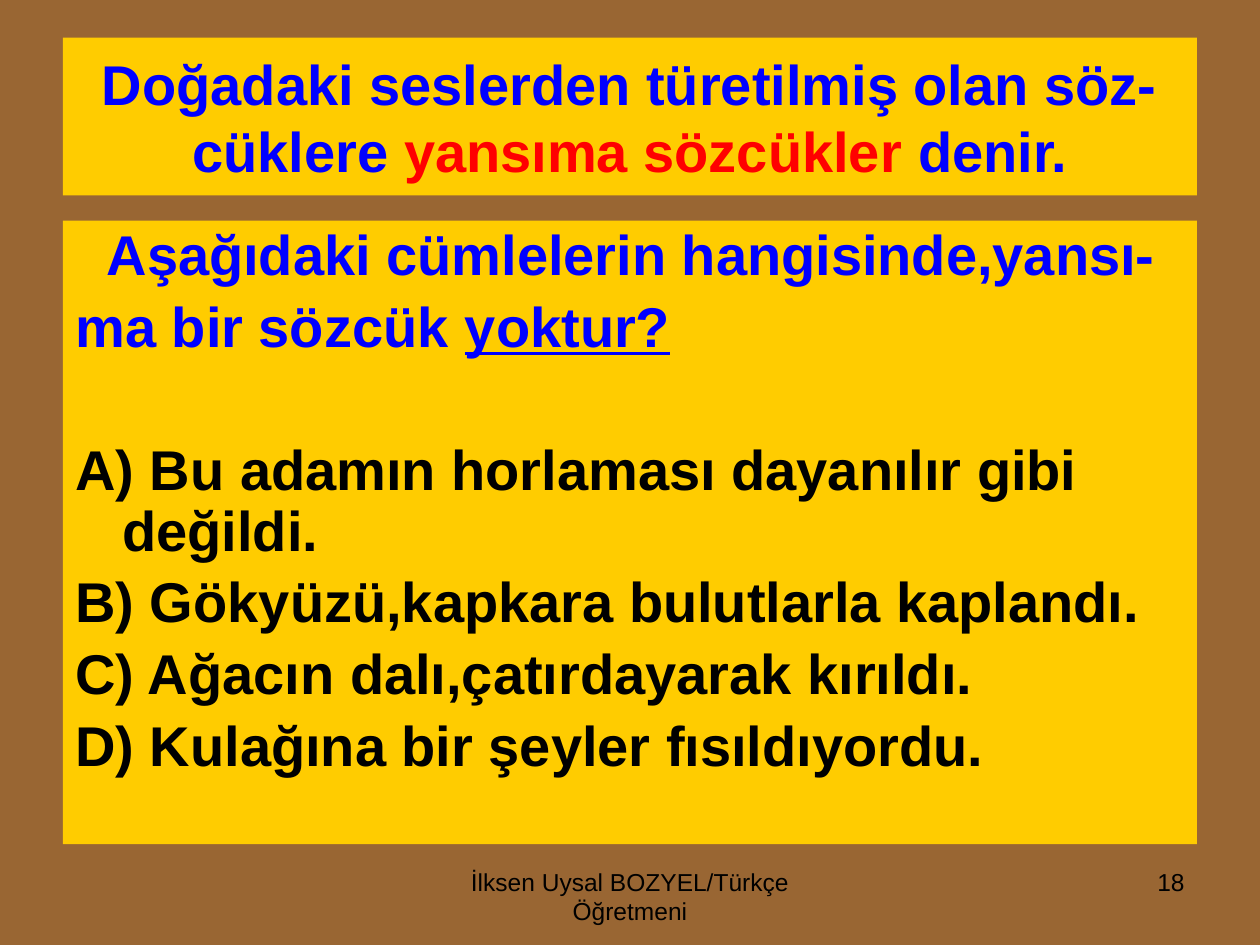
from dataclasses import dataclass

import pptx
import pptx.dml.color
import pptx.enum.shapes
import pptx.enum.text
import pptx.util
from pptx.util import Cm

BROWN, YELLOW = "996633", "FFCC00"
BLUE, RED, BLACK = "0000FF", "FF0000", "000000"
ALIGN = pptx.enum.text.PP_ALIGN
ANCHOR = pptx.enum.text.MSO_ANCHOR

HANGING = 0.95  # cm
QUESTION_INDENT = 0.63  # cm, first line of the question
LINE_GAP = 6.4  # pt, 20 % of the text size
ANSWERS_GAP = 47.5  # pt, one empty line above the answers


@dataclass
class Run:
    text: str
    color: str = BLACK
    size: int = 32
    bold: bool = True
    underline: bool = False


@dataclass
class Line:
    runs: list[Run]
    gap: float = LINE_GAP
    first_indent: float = 0


@dataclass
class Box:
    left: float
    top: float
    width: float
    height: float


def rgb(color: str) -> pptx.dml.color.RGBColor:
    return pptx.dml.color.RGBColor.from_string(color)


def add_runs(paragraph, runs: list[Run]) -> None:
    for item in runs:
        for index, part in enumerate(item.text.split("\n")):
            if index:
                paragraph.add_line_break()
            run = paragraph.add_run()
            run.text = part
            font = run.font
            font.name, font.size = "Arial", pptx.util.Pt(item.size)
            font.bold, font.underline = item.bold, item.underline
            font.color.rgb = rgb(item.color)


def lengths(box: Box) -> list[pptx.util.Length]:
    return [Cm(value) for value in (box.left, box.top, box.width, box.height)]


def add_panel(slide, box: Box, anchor):
    panel = slide.shapes.add_shape(
        pptx.enum.shapes.MSO_SHAPE.RECTANGLE, *lengths(box))
    panel.shadow.inherit = False
    panel.fill.solid()
    panel.fill.fore_color.rgb = rgb(YELLOW)
    panel.line.fill.background()
    panel.text_frame.word_wrap = True
    panel.text_frame.vertical_anchor = anchor
    return panel.text_frame


def add_footer(slide, box: Box, text: str, alignment) -> None:
    frame = slide.shapes.add_textbox(*lengths(box)).text_frame
    frame.word_wrap = True
    paragraph = frame.paragraphs[0]
    paragraph.alignment = alignment
    add_runs(paragraph, [Run(text, size=14, bold=False)])


def add_lines(frame, lines: list[Line]) -> None:
    for index, line in enumerate(lines):
        paragraph = frame.add_paragraph() if index else frame.paragraphs[0]
        paragraph.alignment = ALIGN.LEFT
        paragraph.line_spacing = 0.9
        paragraph.space_before = pptx.util.Pt(line.gap)
        properties = paragraph._p.get_or_add_pPr()
        properties.set("marL", str(Cm(HANGING)))
        properties.set("indent", str(Cm(line.first_indent - HANGING)))
        add_runs(paragraph, line.runs)


DEFINITION = [
    Run("Doğadaki seslerden türetilmiş olan söz-\ncüklere ", BLUE),
    Run("yansıma sözcükler", RED),
    Run(" denir.", BLUE),
]
QUESTION = [
    Line([Run("Aşağıdaki cümlelerin hangisinde,yansı-", BLUE)],
         first_indent=QUESTION_INDENT),
    Line([Run("ma bir sözcük ", BLUE), Run("yoktur?", BLUE, underline=True)]),
]
ANSWERS = [
    "A) Bu adamın horlaması dayanılır gibi değildi.",
    "B) Gökyüzü,kapkara bulutlarla kaplandı.",
    "C) Ağacın dalı,çatırdayarak kırıldı.",
    "D) Kulağına bir şeyler fısıldıyordu.",
]


def main() -> None:
    deck = pptx.Presentation()
    deck.slide_width, deck.slide_height = Cm(25.4), Cm(19.05)
    slide = deck.slides.add_slide(deck.slide_layouts[6])
    slide.background.fill.solid()
    slide.background.fill.fore_color.rgb = rgb(BROWN)

    # Footer and page number
    add_footer(slide, Box(8.68, 17.35, 8.04, 1.32),
               "İlksen Uysal BOZYEL/Türkçe Öğretmeni", ALIGN.CENTER)
    add_footer(slide, Box(18.2, 17.35, 5.93, 1.32), "18", ALIGN.RIGHT)

    # Definition
    definition = add_panel(slide, Box(1.27, 0.76, 22.86, 3.18), ANCHOR.MIDDLE)
    definition.paragraphs[0].alignment = ALIGN.CENTER
    add_runs(definition.paragraphs[0], DEFINITION)

    # Question and answers
    answers = [Line([Run(text)], LINE_GAP if index else ANSWERS_GAP)
               for index, text in enumerate(ANSWERS)]
    exercise = add_panel(slide, Box(1.27, 4.45, 22.86, 12.57), ANCHOR.TOP)
    add_lines(exercise, QUESTION + answers)

    deck.save("out.pptx")


if __name__ == "__main__":
    main()
